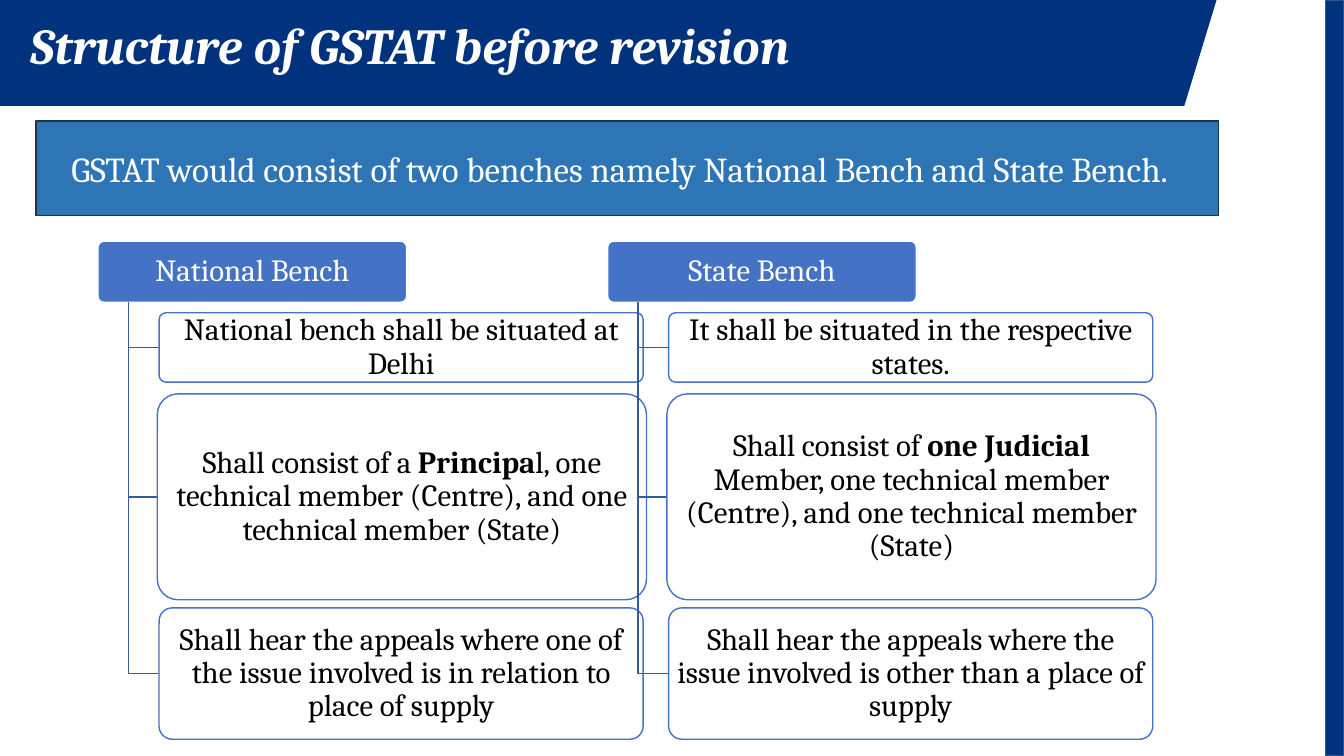
"""Builds the slide on the structure of GSTAT before revision."""
import pptx
import pptx.dml.color
import pptx.enum.shapes
import pptx.enum.text
import pptx.oxml
import pptx.oxml.ns
import pptx.util

Pt = pptx.util.Pt
SHAPES = pptx.enum.shapes.MSO_SHAPE
ALIGN = pptx.enum.text.PP_ALIGN
MIDDLE = pptx.enum.text.MSO_ANCHOR.MIDDLE

TITLE = "Structure of GSTAT before revision"
SUMMARY = "GSTAT would consist of two benches namely National Bench and State Bench."
BENCHES = [
    ("National Bench", [
        [("National bench shall be situated at Delhi", False)],
        [("Shall consist of a ", False), ("Principa", True),
         ("l, one technical member (Centre), and one technical member (State)", False)],
        [("Shall hear the appeals where one of the issue involved is in relation"
          " to place of supply", False)],
    ]),
    ("State Bench", [
        [("It shall be situated in the respective states.", False)],
        [("Shall consist of ", False), ("one Judicial ", True),
         ("Member, one technical member (Centre), and one technical member (State)", False)],
        [("Shall hear the appeals where the issue involved is other than a place"
          " of supply", False)],
    ]),
]
COLORS = {"navy": "00327D", "navy edge": "325491", "banner": "2E75B6",
          "banner edge": "1E3256", "bench": "4472C4", "branch": "365B9D",
          "white": "FFFFFF", "black": "000000"}
FONT = "Cambria"
SLIDE_WIDTH, SLIDE_HEIGHT = 960, 540
RIBBON = [(0, 0), (0, 75.6), (846, 75.6), (869, 0)]
BENCH_LEFT, BENCH_STEP = 70, 364
HEAD_TOP, HEAD_WIDTH, HEAD_HEIGHT = 172.3, 220.5, 43.7
TRUNK_INDENT = 21.8
ROWS = [(43.6, 223.4, 345.8, 49.6), (42.4, 281.4, 349.4, 147), (43.6, 434.2, 345.8, 93.8)]


def color(name):
    return pptx.dml.color.RGBColor.from_string(COLORS[name])


def paint(shape, fill, line):
    """Set the fill and outline of a shape; None means no paint."""
    shape.shadow.inherit = False
    if fill:
        shape.fill.solid()
        shape.fill.fore_color.rgb = color(fill)
    else:
        shape.fill.background()
    if line:
        shape.line.color.rgb = color(line)
        shape.line.width = Pt(1)
    else:
        shape.line.fill.background()


def add_box(page, kind, place, fill, line):
    box = page.shapes.add_shape(kind, *map(Pt, place))
    paint(box, fill, line)
    if kind == SHAPES.ROUNDED_RECTANGLE:
        box.adjustments[0] = 0.1
    return box


def add_path(page, points, fill, line):
    builder = page.shapes.build_freeform(*map(Pt, points[0]))
    builder.add_line_segments([(Pt(x), Pt(y)) for x, y in points[1:]], close=bool(fill))
    path_shape = builder.convert_to_shape()
    paint(path_shape, fill, line)


def write(shape, runs, size, ink, align=ALIGN.CENTER, spacing=0.9):
    frame = shape.text_frame
    frame.word_wrap = True
    frame.vertical_anchor = MIDDLE
    para = frame.paragraphs[0]
    para.alignment = align
    para.line_spacing = spacing
    para.font.name = FONT
    para.font.size = Pt(size)
    para.font.color.rgb = color(ink)
    for text, bold in runs:
        span = para.add_run()
        span.text = text
        if bold:
            span.font.bold = True
    return para


def write_bench_text(box, runs, ink):
    frame = box.text_frame
    frame.margin_left = frame.margin_right = Pt(3.5)
    frame.margin_top = frame.margin_bottom = Pt(2.3)
    write(box, runs, 22, ink)


def make_translucent(box):
    paint_node = box.fill.fore_color._xFill[0]
    paint_node.append(pptx.oxml.parse_xml(
        f'<a:alpha {pptx.oxml.ns.nsdecls("a")} val="90000"/>'))


def add_bench(page, left, name, rows):
    head = add_box(page, SHAPES.ROUNDED_RECTANGLE, (left, HEAD_TOP, HEAD_WIDTH, HEAD_HEIGHT),
                   "bench", "white")
    write_bench_text(head, [(name, False)], "white")
    trunk, start = left + TRUNK_INDENT, HEAD_TOP + HEAD_HEIGHT
    for runs, (indent, top, width, height) in zip(rows, ROWS):
        middle = top + height / 2
        add_path(page, [(trunk, start), (trunk, middle), (left + indent, middle)],
                 None, "branch")
        box = add_box(page, SHAPES.ROUNDED_RECTANGLE, (left + indent, top, width, height),
                      "white", "bench")
        make_translucent(box)
        write_bench_text(box, runs, "black")


def main():
    deck = pptx.Presentation()
    deck.slide_width, deck.slide_height = Pt(SLIDE_WIDTH), Pt(SLIDE_HEIGHT)
    page = deck.slides.add_slide(deck.slide_layouts[5])

    add_path(page, RIBBON, "navy", None)
    add_box(page, SHAPES.RECTANGLE, (947, 0, 13, SLIDE_HEIGHT), "navy", "navy edge")

    title = page.shapes.title
    title.left, title.top, title.width, title.height = map(Pt, (14.4, 11.5, 661.7, 46))
    title.text_frame.auto_size = pptx.enum.text.MSO_AUTO_SIZE.NONE
    heading = write(title, [(TITLE, False)], 36, "white", ALIGN.LEFT)
    heading.font.bold = heading.font.italic = True
    page.shapes._spTree.append(title._element)

    for index, (name, rows) in enumerate(BENCHES):
        add_bench(page, BENCH_LEFT + index * BENCH_STEP, name, rows)

    banner = add_box(page, SHAPES.RECTANGLE, (25.7, 86.4, 844.6, 67.4), "banner", "banner edge")
    banner.text_frame.margin_right = Pt(18)
    write(banner, [(SUMMARY, False)], 25, "white", spacing=1)

    deck.save("out.pptx")


if __name__ == "__main__":
    main()
